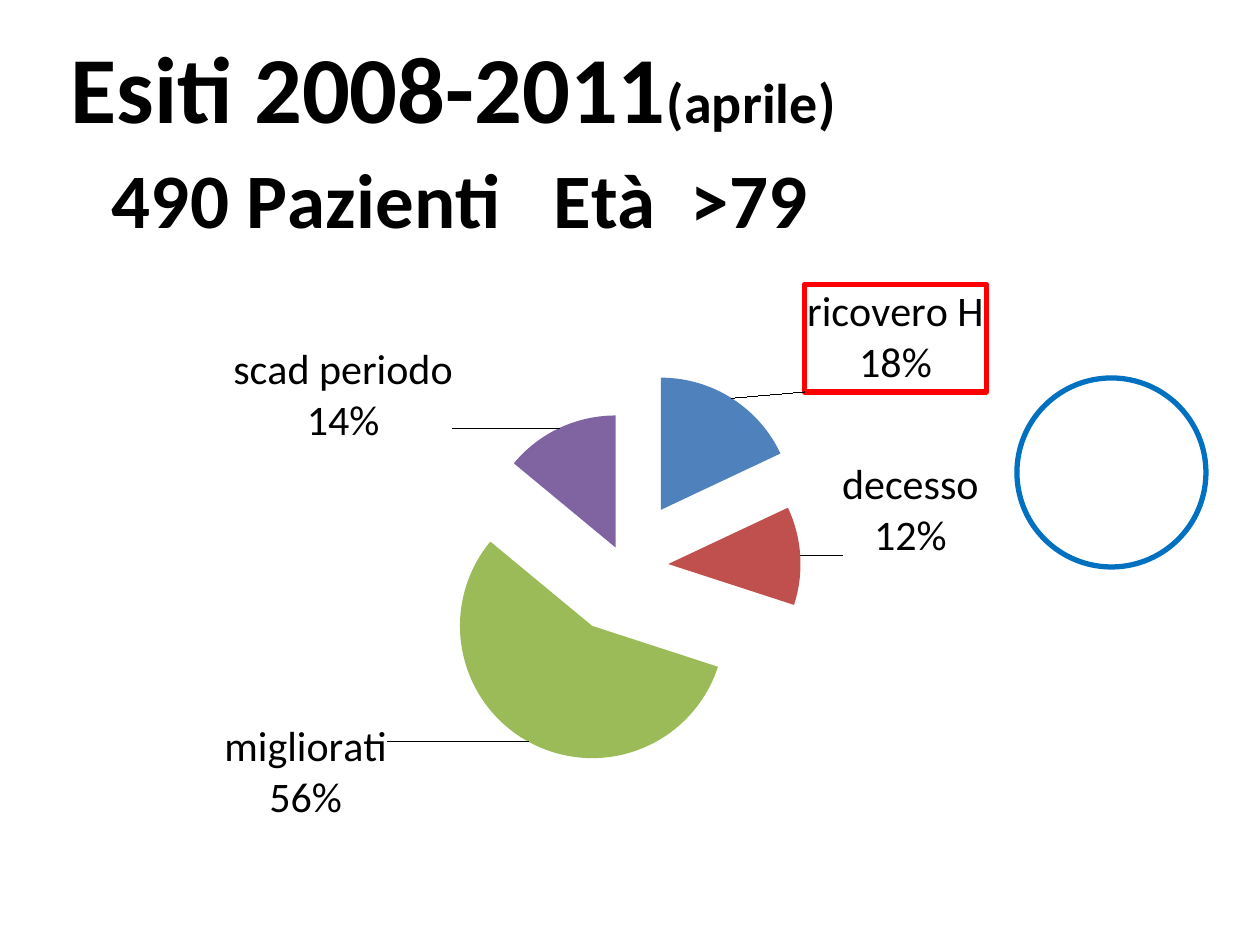
from pptx import Presentation, util as u
from pptx.chart import data
from pptx.dml import color
from pptx.enum import chart as ce, shapes
from pptx.oxml import parse_xml
from pptx.oxml.ns import nsdecls, qn

FONT = "Calibri"
TITLE = [
    [("Esiti 2008-2011", 54), ("(aprile) ", 32)],
    [(" ", 48), ("490 Pazienti   Età  >79 ", 44)],
]
OUTCOMES = [
    ("ricovero H", 18, "4F81BD", 51, (0.06, 0)),
    ("decesso", 12, "C0504D", 33, (0.03, -0.05)),
    ("migliorati", 56, "9BBB59", 51, (-0.12, -0.03)),
    ("scad periodo", 14, "8064A2", 16, (-0.09, 0.03)),
]


def px(n):
    return u.Emu(n * 914400 // 126)


def rgb(code):
    return color.RGBColor.from_string(code)


def style_font(font, size, bold=False):
    font.name = FONT
    font.size = u.Pt(size)
    font.bold = bold
    font.color.rgb = rgb("000000")


def chart_xml(tag, content):
    return parse_xml(f'<c:{tag} {nsdecls("c", "a")}>{content}</c:{tag}>')


def set_layout(parent, index, **values):
    for old in parent.findall(qn("c:layout")):
        parent.remove(old)
    items = "".join(f'<c:{k} val="{v}"/>' for k, v in values.items())
    parent.insert(index, chart_xml("layout", f"<c:manualLayout>{items}</c:manualLayout>"))


def add_title(chart):
    tf = chart.chart_title.text_frame
    for i, runs in enumerate(TITLE):
        p = tf.paragraphs[0] if i == 0 else tf.add_paragraph()
        for words, size in runs:
            r = p.add_run()
            r.text = words
            style_font(r.font, size, True)
    title = chart.element.xpath("c:chart/c:title")[0]
    set_layout(title, 1, xMode="edge", yMode="edge", x=0.02, y=0.03)


def style_slice(point, fill):
    point.format.fill.solid()
    point.format.fill.fore_color.rgb = rgb(fill)
    point.format.line.fill.background()
    label = point.data_label
    style_font(label.font, 24)
    label.position = ce.XL_LABEL_POSITION.OUTSIDE_END


def add_outcomes(slide, x, y, w, h):
    cd = data.CategoryChartData()
    cd.categories = [o[0] for o in OUTCOMES]
    cd.add_series("Series 1", [o[1] for o in OUTCOMES])
    chart = slide.shapes.add_chart(
        ce.XL_CHART_TYPE.PIE, px(x), px(y), px(w), px(h), cd).chart
    chart.has_legend = False
    style_font(chart.font, 10)
    add_title(chart)
    plot = chart.plots[0]
    plot.vary_by_categories = True
    s = plot.series[0]
    labels = s.data_labels
    style_font(labels.font, 24)
    labels.show_value = False
    labels.show_category_name = True
    labels.show_percentage = True
    set_layout(chart.element.xpath("c:chart/c:plotArea")[0], 0,
               layoutTarget="inner", xMode="edge", yMode="edge",
               x=0.39, y=0.49, w=0.23, h=0.31)
    for i, (name, value, fill, explosion, offset) in enumerate(OUTCOMES):
        style_slice(s.points[i], fill)
        dpt = chart.element.xpath(f".//c:dPt[c:idx/@val='{i}']")[0]
        explode = parse_xml(f'<c:explosion {nsdecls("c")} val="{explosion}"/>')
        dpt.find(qn("c:spPr")).addprevious(explode)
        label = chart.element.xpath(f".//c:dLbl[c:idx/@val='{i}']")[0]
        set_layout(label, 1, x=offset[0], y=offset[1])
        for tag, shown in (("Val", 0), ("CatName", 1), ("Percent", 1)):
            label.find(qn(f"c:show{tag}")).set("val", str(shown))
        label.append(chart_xml("separator", "\n"))
    frame_label(chart.element.xpath(".//c:dLbl")[0], "FF0000", 3)


def frame_label(label, line, width):
    for old in label.findall(qn("c:spPr")):
        label.remove(old)
    label.find(qn("c:txPr")).addprevious(chart_xml(
        "spPr", f'<a:ln w="{u.Pt(width)}"><a:solidFill>'
        f'<a:srgbClr val="{line}"/></a:solidFill></a:ln>'))


def add_ring(slide, x, y, w, h):
    sp = slide.shapes.add_shape(shapes.MSO_SHAPE.OVAL, px(x), px(y), px(w), px(h))
    sp.shadow.inherit = False
    sp.fill.background()
    sp.line.color.rgb = rgb("0070C0")
    sp.line.width = u.Pt(3)


def main():
    prs = Presentation()
    prs.slide_width, prs.slide_height = px(1260), px(945)
    slide = prs.slides.add_slide(prs.slide_layouts[6])
    add_outcomes(slide, 44, 0, 1150, 879)
    add_ring(slide, 1017, 378, 189, 189)
    prs.save("out.pptx")


if __name__ == "__main__":
    main()
